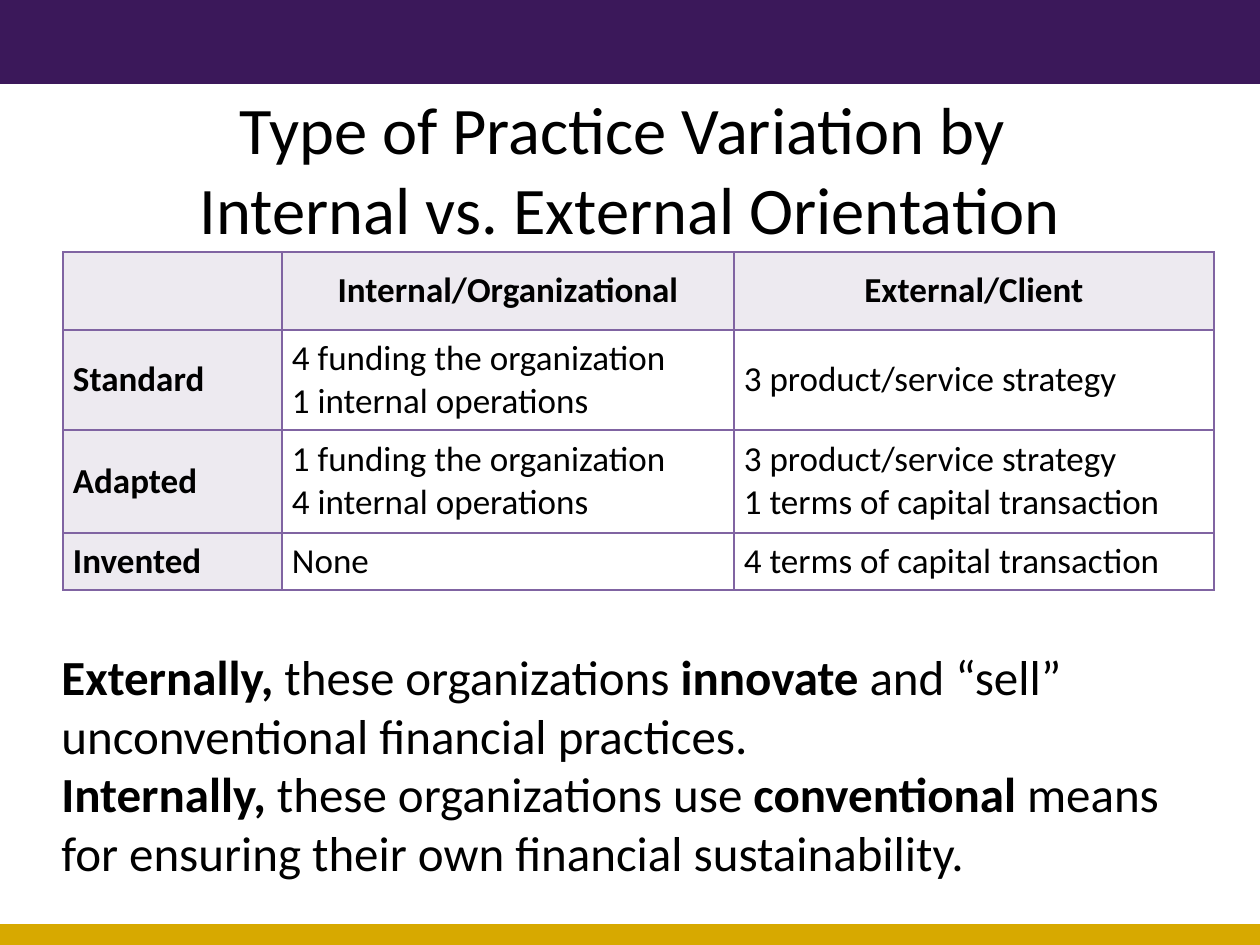
from lxml.etree import SubElement
from pptx import Presentation
from pptx.dml.color import RGBColor
from pptx.enum.shapes import MSO_SHAPE as Shape
from pptx.enum.text import MSO_ANCHOR as Anchor, PP_ALIGN as Align
from pptx.oxml.ns import qn
from pptx.util import Pt

SCALE = 914400 / 126
COLORS = {
    "purple": "3B185A",
    "gold": "D7A900",
    "border": "8064A2",
    "header": "EDEAF0",
    "white": "FFFFFF",
    "black": "000000",
}
COLUMN_WIDTHS = [219, 452, 480]
ROW_HEIGHTS = [78, 100, 103, 57]
PRACTICES = [
    ["", "Internal/Organizational", "External/Client"],
    ["Standard", "4 funding the organization\n1 internal operations", "3 product/service strategy"],
    ["Adapted", "1 funding the organization\n4 internal operations",
     "3 product/service strategy\n1 terms of capital transaction"],
    ["Invented", "None", "4 terms of capital transaction"],
]
TITLE = [[("Type of Practice Variation by \vInternal vs. External Orientation", False)]]
FINDINGS = [
    [("Externally,", True), (" these organizations ", False), ("innovate", True),
     (" and “sell” unconventional financial practices.", False)],
    [("Internally,", True), (" these organizations use ", False), ("conventional", True),
     (" means for ensuring their own financial sustainability.", False)],
]


def px(length):
    return round(length * SCALE)


def rgb(name):
    return RGBColor.from_string(COLORS[name])


class SlideBuilder:
    """Draws styled elements on the current slide."""

    def __init__(self, slide, font="Calibri"):
        self.slide = slide
        self.font = font

    def style(self, paragraph, size, align, bold=None):
        paragraph.alignment = align
        font = paragraph.font
        font.name, font.size, font.bold = self.font, Pt(size), bold
        font.color.rgb = rgb("black")

    def bar(self, top, height, color):
        shape = self.slide.shapes.add_shape(Shape.RECTANGLE, 0, px(top), px(1260), px(height))
        shape.shadow.inherit = False
        shape.fill.solid()
        shape.fill.fore_color.rgb = rgb(color)
        shape.line.fill.background()

    def text(self, box, paragraphs, size, align=Align.LEFT, anchor=Anchor.TOP):
        frame = self.slide.shapes.add_textbox(*map(px, box)).text_frame
        frame.word_wrap = True
        frame.vertical_anchor = anchor
        for index, runs in enumerate(paragraphs):
            paragraph = frame.add_paragraph() if index else frame.paragraphs[0]
            self.style(paragraph, size, align)
            for words, bold in runs:
                if "\v" in words:
                    first, words = words.split("\v")
                    paragraph.add_run().text = first
                    paragraph.add_line_break()
                run = paragraph.add_run()
                run.text = words
                run.font.bold = bold

    def borders(self, cell):
        properties = cell._tc.get_or_add_tcPr()
        for position, side in enumerate(("lnL", "lnR", "lnT", "lnB")):
            line = properties.makeelement(qn(f"a:{side}"), {"w": str(Pt(1))})
            fill = SubElement(line, qn("a:solidFill"))
            SubElement(fill, qn("a:srgbClr"), val=COLORS["border"])
            properties.insert(position, line)

    def table(self, left, top, widths, heights, rows, size):
        table = self.slide.shapes.add_table(
            len(rows), len(widths), px(left), px(top), px(sum(widths)), px(sum(heights))).table
        for column, width in zip(table.columns, widths):
            column.width = px(width)
        for row, height in zip(table.rows, heights):
            row.height = px(height)
        for row_index, row in enumerate(rows):
            for column_index, words in enumerate(row):
                cell = table.cell(row_index, column_index)
                heading = row_index == 0 or column_index == 0
                cell.fill.solid()
                cell.fill.fore_color.rgb = rgb("header" if heading else "white")
                cell.vertical_anchor = Anchor.MIDDLE
                cell.margin_left = cell.margin_right = px(10)
                cell.margin_top = cell.margin_bottom = px(2)
                cell.text = words
                for paragraph in cell.text_frame.paragraphs:
                    self.style(paragraph, size, Align.LEFT if row_index else Align.CENTER, heading)
                self.borders(cell)


def main():
    presentation = Presentation()
    presentation.slide_width, presentation.slide_height = px(1260), px(945)
    builder = SlideBuilder(presentation.slides.add_slide(presentation.slide_layouts[6]))
    builder.bar(0, 84, "purple")
    builder.bar(924, 21, "gold")
    builder.text((63, 105, 1134, 126), TITLE, 38, Align.CENTER, Anchor.MIDDLE)
    builder.table(63, 252, COLUMN_WIDTHS, ROW_HEIGHTS, PRACTICES, 20)
    builder.text((49, 640, 1166, 251), FINDINGS, 28)
    presentation.save("out.pptx")


if __name__ == "__main__":
    main()
